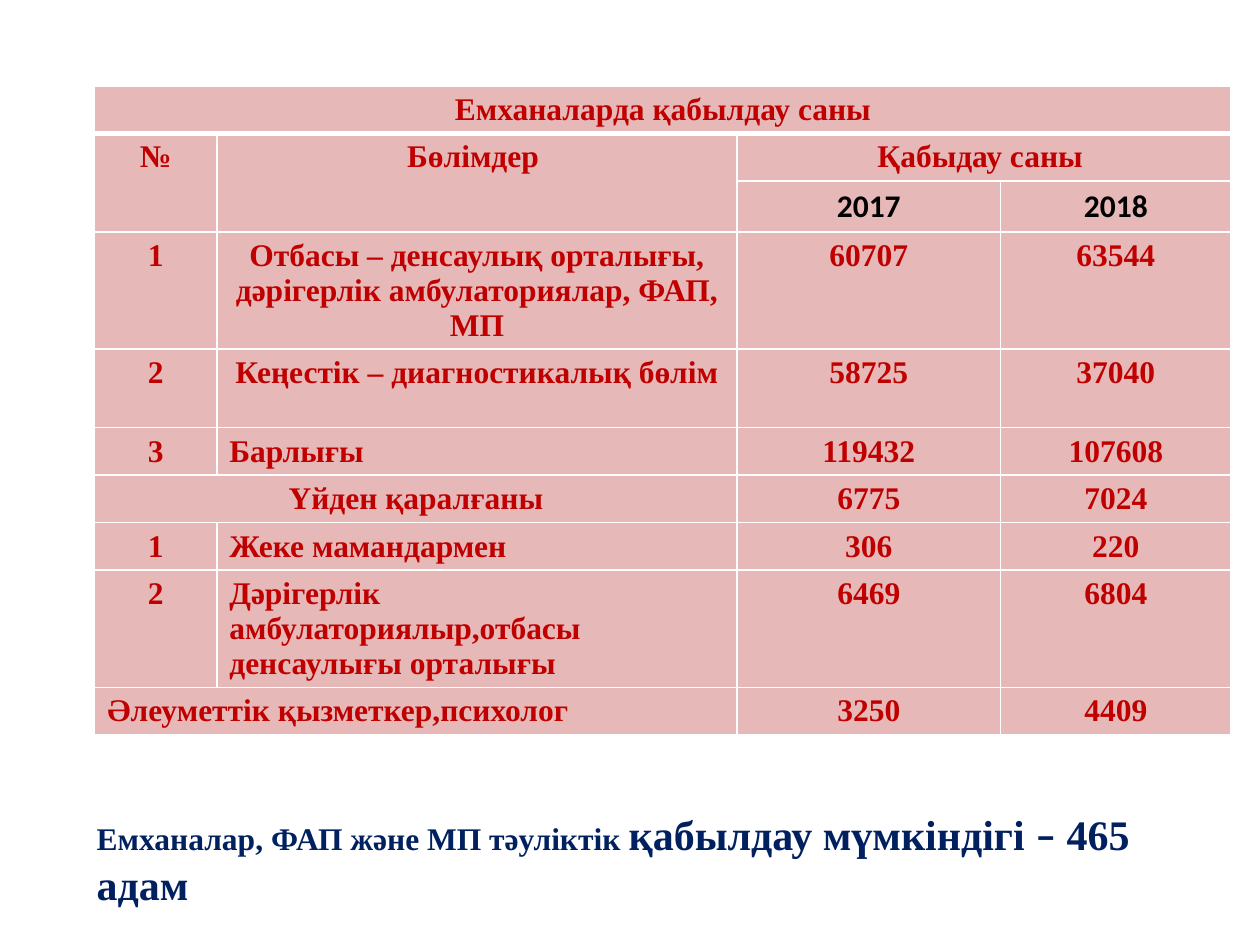
from lxml import etree
from pptx import Presentation
from pptx.dml.color import RGBColor
from pptx.enum import text
from pptx.oxml import ns
from pptx.util import Cm, Pt

COLORS = {"cell": "E6B9B8", "red": "C00000", "black": "000000", "navy": "002060", "border": "FFFFFF"}
SERIF, SANS = "Times New Roman", "Calibri"

# None marks a cell covered by a merge
ROWS = [
    ("Емханаларда қабылдау саны", None, None, None),
    ("№", "Бөлімдер ", "Қабыдау саны ", None),
    (None, None, "2017", "2018"),
    ("1", "Отбасы – денсаулық орталығы, дәрігерлік амбулаториялар, ФАП, МП", "60707", "63544"),
    ("2", "Кеңестік – диагностикалық бөлім", "58725", "37040"),
    ("3", "Барлығы", "119432", "107608"),
    ("Үйден қаралғаны", None, "6775", "7024"),
    ("1", "Жеке мамандармен", "306", "220"),
    ("2", "Дәрігерлік амбулаториялыр,отбасы денсаулығы орталығы", "6469", "6804"),
    ("Әлеуметтік қызметкер,психолог", None, "3250", "4409"),
]
MERGES = [((0, 0), (0, 3)), ((1, 0), (2, 0)), ((1, 1), (2, 1)),
          ((1, 2), (1, 3)), ((6, 0), (6, 1)), ((9, 0), (9, 1))]
LEFT_ALIGNED = {(5, 1), (7, 1), (8, 1), (9, 0)}
YEAR_ROW = 2
COLUMN_WIDTHS = (2.46, 10.49, 5.31, 4.65)
ROW_HEIGHTS = (0.95, 0.95, 1.03, 2.35, 1.58, 0.95, 0.95, 0.95, 2.35, 0.95)
CAPACITY_NOTE = [
    ("Емханалар, ФАП және МП тәуліктік ", 18, SERIF),
    ("қабылдау мүмкіндігі ", 24, SERIF),
    ("–", 24, SANS),
    (" 465 адам", 24, SERIF),
]


def add_run(paragraph, wording, size, font_name, color):
    run = paragraph.add_run()
    run.text = wording
    for name, value in {"size": Pt(size), "name": font_name, "bold": True}.items():
        setattr(run.font, name, value)
    run.font.color.rgb = RGBColor.from_string(COLORS[color])


def set_borders(cell, widths):
    """Draw the borders; widths maps L, R, T and B to points."""
    properties = cell._tc.get_or_add_tcPr()
    for position, (side, width) in enumerate(widths.items()):
        line = etree.Element(ns.qn(f"a:ln{side}"), w=str(Pt(width)))
        fill = etree.SubElement(line, ns.qn("a:solidFill"))
        etree.SubElement(fill, ns.qn("a:srgbClr"), val=COLORS["border"])
        properties.insert(position, line)


def add_visits_table(slide):
    frame = slide.shapes.add_table(len(ROWS), len(COLUMN_WIDTHS), Cm(1.91), Cm(1.73),
                                   Cm(sum(COLUMN_WIDTHS)), Cm(sum(ROW_HEIGHTS)))
    table = frame.table
    table.first_row = table.horz_banding = False
    for column, width in zip(table.columns, COLUMN_WIDTHS):
        column.width = Cm(width)
    for row, height in zip(table.rows, ROW_HEIGHTS):
        row.height = Cm(height)
    for start, end in MERGES:
        table.cell(*start).merge(table.cell(*end))
    for r, row in enumerate(ROWS):
        for c, wording in enumerate(row):
            cell = table.cell(r, c)
            cell.fill.solid()
            cell.fill.fore_color.rgb = RGBColor.from_string(COLORS["cell"])
            set_borders(cell, {"L": 1, "R": 1, "T": 3 if r == 1 else 1, "B": 3 if r == 0 else 1})
            if wording is None:
                continue
            paragraph = cell.text_frame.paragraphs[0]
            paragraph.alignment = (text.PP_ALIGN.LEFT if (r, c) in LEFT_ALIGNED
                                   else text.PP_ALIGN.CENTER)
            font_name, color = (SANS, "black") if r == YEAR_ROW else (SERIF, "red")
            add_run(paragraph, wording, 18, font_name, color)


def add_capacity_note(slide):
    box = slide.shapes.add_textbox(Cm(1.7), Cm(16.15), Cm(22.91), Cm(2.31))
    settings = {"word_wrap": True, "vertical_anchor": text.MSO_ANCHOR.MIDDLE,
                "auto_size": text.MSO_AUTO_SIZE.SHAPE_TO_FIT_TEXT}
    for name, value in settings.items():
        setattr(box.text_frame, name, value)
    for wording, size, font_name in CAPACITY_NOTE:
        add_run(box.text_frame.paragraphs[0], wording, size, font_name, "navy")


def main():
    presentation = Presentation()
    presentation.slide_width, presentation.slide_height = Cm(25.4), Cm(19.05)
    slide = presentation.slides.add_slide(presentation.slide_layouts[6])
    add_visits_table(slide)
    add_capacity_note(slide)
    presentation.save("out.pptx")


if __name__ == "__main__":
    main()
